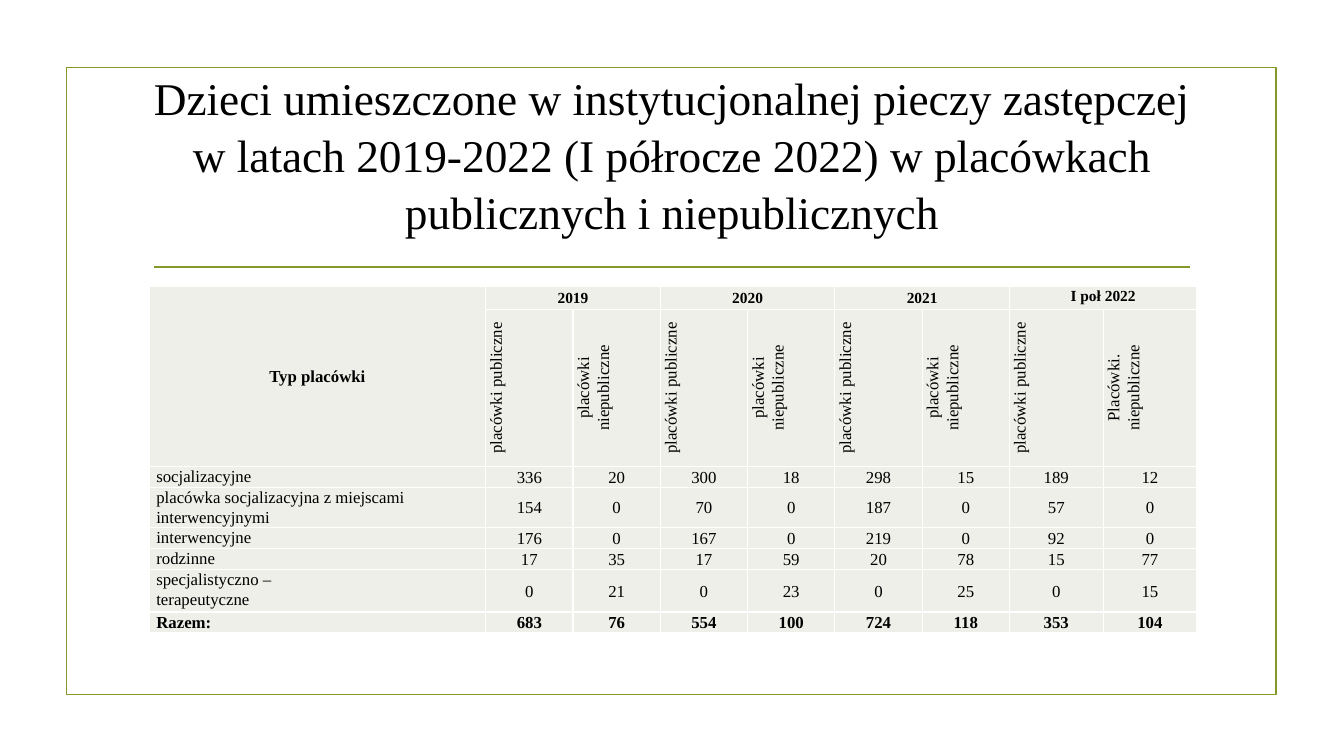
from dataclasses import dataclass

import lxml.etree
import pptx
import pptx.dml.color
import pptx.enum.shapes
import pptx.enum.text
import pptx.oxml.ns
import pptx.util

Cm = pptx.util.Cm
Pt = pptx.util.Pt
qn = pptx.oxml.ns.qn
ALIGN = pptx.enum.text.PP_ALIGN
ANCHOR = pptx.enum.text.MSO_ANCHOR

COLOURS = {"olive": "83992A", "cell": "EDEFE8", "border": "FFFFFF", "text": "000000"}
FONT_NAME = "Times New Roman"
PUBLIC = "placówki publiczne"
PRIVATE = "placówki\vniepubliczne"


@dataclass
class Year:
    label: str
    private_heading: str = PRIVATE
    column_cm: float = 2.2
    anchor: ANCHOR = ANCHOR.MIDDLE


@dataclass
class Facility:
    name: str
    counts: tuple[int, ...]
    height_cm: float = 0.53
    bold: bool = False


YEARS = [
    Year("2019"),
    Year("2020"),
    Year("2021"),
    Year("I poł 2022", "Placówki. niepubliczne", 2.36, ANCHOR.TOP),
]
FACILITIES = [
    Facility("socjalizacyjne", (336, 20, 300, 18, 298, 15, 189, 12)),
    Facility("placówka socjalizacyjna z miejscami interwencyjnymi",
             (154, 0, 70, 0, 187, 0, 57, 0), 1.01),
    Facility("interwencyjne", (176, 0, 167, 0, 219, 0, 92, 0)),
    Facility("rodzinne", (17, 35, 17, 59, 20, 78, 15, 77)),
    Facility("specjalistyczno –\nterapeutyczne", (0, 21, 0, 23, 0, 25, 0, 15), 1.07),
    Facility("Razem:", (683, 76, 554, 100, 724, 118, 353, 104), bold=True),
]


def rgb(colour: str) -> pptx.dml.color.RGBColor:
    return pptx.dml.color.RGBColor.from_string(COLOURS[colour])


def apply(target, values: dict) -> None:
    for attribute, value in values.items():
        setattr(target, attribute, value)


def write(frame, text: str, size: float, spacing: float,
          align: ALIGN = ALIGN.CENTER, bold: bool = False) -> None:
    frame.text = text
    for paragraph in frame.paragraphs:
        apply(paragraph, {"alignment": align, "line_spacing": spacing})
        for run in paragraph.runs:
            apply(run.font, {"name": FONT_NAME, "size": Pt(size), "bold": bold})
            run.font.color.rgb = rgb("text")


def style_cell(cell) -> None:
    apply(cell, {"margin_left": Cm(0.18), "margin_right": Cm(0.18),
                 "margin_top": 0, "margin_bottom": 0})
    properties = cell._tc.get_or_add_tcPr()
    for side in ("a:lnL", "a:lnR", "a:lnT", "a:lnB"):
        border = lxml.etree.SubElement(properties, qn(side), w=str(Pt(1)))
        solid = lxml.etree.SubElement(border, qn("a:solidFill"))
        lxml.etree.SubElement(solid, qn("a:srgbClr"), val=COLOURS["border"])
    cell.fill.solid()
    cell.fill.fore_color.rgb = rgb("cell")


def write_cell(cell, text: str, size: float = 12, align: ALIGN = ALIGN.CENTER,
               bold: bool = False, anchor: ANCHOR = ANCHOR.MIDDLE) -> None:
    write(cell.text_frame, text, size, 1.07, align, bold)
    cell.vertical_anchor = anchor


def draw_frame(slide) -> None:
    border = slide.shapes.add_shape(pptx.enum.shapes.MSO_SHAPE.RECTANGLE,
                                    Cm(1.68), Cm(1.7), Cm(30.48), Cm(15.8))
    border.shadow.inherit = False
    border.fill.background()
    divider = slide.shapes.add_connector(pptx.enum.shapes.MSO_CONNECTOR.STRAIGHT,
                                         Cm(3.89), Cm(6.73), Cm(30), Cm(6.73))
    lxml.etree.SubElement(divider._element.spPr, qn("a:effectLst"))
    for outline in (border.line, divider.line):
        outline.color.rgb = rgb("olive")
        outline.width = Pt(1.25)
    divider._element.spPr.append(divider._element.spPr.find(qn("a:effectLst")))


def draw_title(slide) -> None:
    title = slide.shapes.title
    apply(title, {"left": Cm(3.6), "top": Cm(2.72), "width": Cm(26.67), "height": Cm(3.63)})
    apply(title.text_frame, {"word_wrap": True, "vertical_anchor": ANCHOR.MIDDLE,
                             "auto_size": pptx.enum.text.MSO_AUTO_SIZE.NONE,
                             "margin_bottom": Cm(1.5)})
    write(title.text_frame,
          "Dzieci umieszczone w instytucjonalnej pieczy zastępczej w latach 2019-2022 "
          "(I półrocze 2022) w placówkach publicznych i niepublicznych", 32.4, 1.05)


def draw_table(slide) -> None:
    widths = [8.48] + [year.column_cm for year in YEARS for _ in range(2)]
    heights = [0.58, 3.94] + [facility.height_cm for facility in FACILITIES]
    table = slide.shapes.add_table(len(heights), len(widths), Cm(3.76), Cm(7.22),
                                   Cm(sum(widths)), Cm(sum(heights))).table
    apply(table, {"first_row": False, "horz_banding": False})
    for column, width in zip(table.columns, widths):
        column.width = Cm(width)
    for row, height in zip(table.rows, heights):
        row.height = Cm(height)
    for cell in table.iter_cells():
        style_cell(cell)

    table.cell(0, 0).merge(table.cell(1, 0))
    write_cell(table.cell(0, 0), "Typ placówki", bold=True)
    for index, year in enumerate(YEARS):
        first = 1 + 2 * index
        table.cell(0, first).merge(table.cell(0, first + 1))
        write_cell(table.cell(0, first), year.label, 11, bold=True, anchor=year.anchor)
        for offset, heading in enumerate((PUBLIC, year.private_heading)):
            cell = table.cell(1, first + offset)
            write_cell(cell, heading, anchor=ANCHOR.TOP)
            cell._tc.get_or_add_tcPr().set("vert", "vert270")

    for row, facility in enumerate(FACILITIES, start=2):
        write_cell(table.cell(row, 0), facility.name, align=ALIGN.LEFT,
                   bold=facility.bold, anchor=ANCHOR.TOP)
        for column, count in enumerate(facility.counts, start=1):
            write_cell(table.cell(row, column), str(count), bold=facility.bold)


def main() -> None:
    presentation = pptx.Presentation()
    apply(presentation, {"slide_width": Cm(33.87), "slide_height": Cm(19.05)})
    slide = presentation.slides.add_slide(presentation.slide_layouts[5])
    draw_frame(slide)
    draw_table(slide)
    draw_title(slide)
    presentation.save("out.pptx")


if __name__ == "__main__":
    main()
